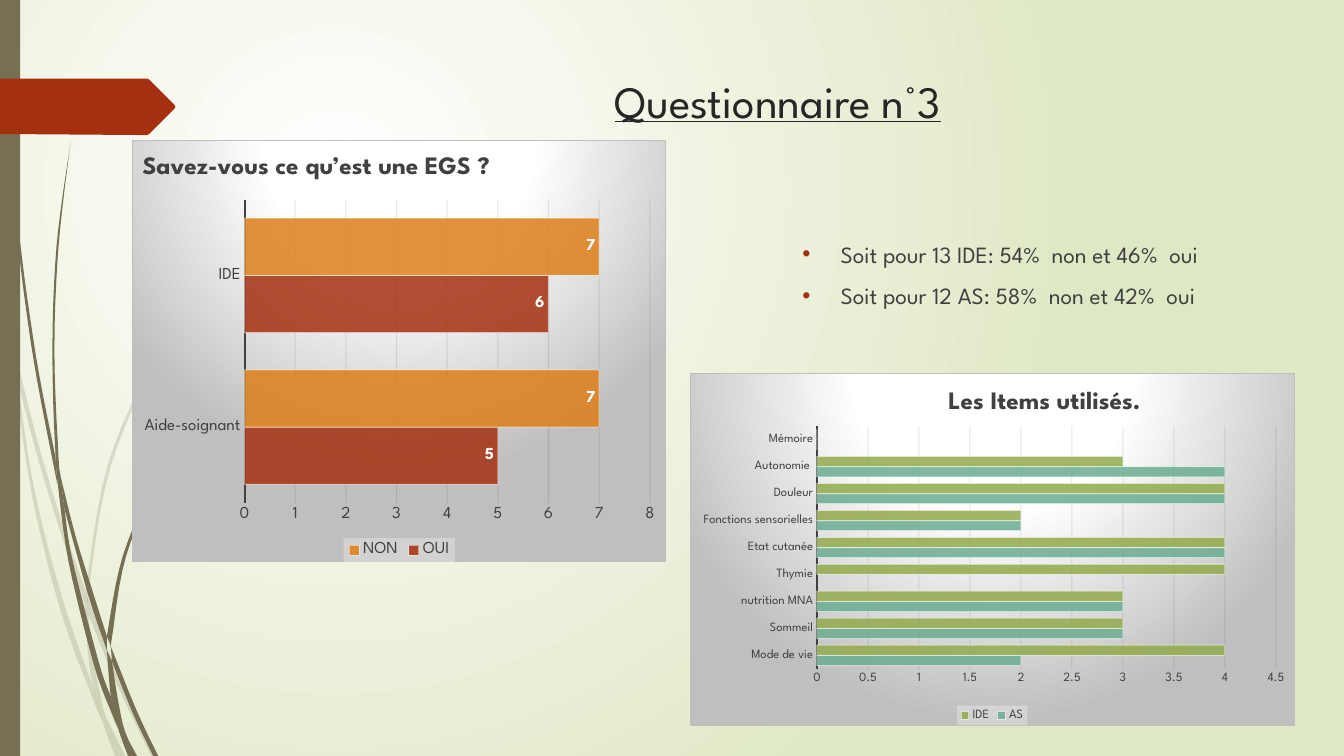
from lxml import etree
from pptx import Presentation
from pptx.chart.data import CategoryChartData
from pptx.dml.color import RGBColor
from pptx.enum.chart import XL_CHART_TYPE, XL_LABEL_POSITION, XL_LEGEND_POSITION, XL_TICK_MARK
from pptx.enum.shapes import MSO_SHAPE
from pptx.enum.text import PP_ALIGN
from pptx.oxml import parse_xml
from pptx.oxml.ns import nsdecls, qn
from pptx.util import Inches, Pt

BARS = XL_CHART_TYPE.BAR_CLUSTERED
INSIDE_END = XL_LABEL_POSITION.INSIDE_END
BOTTOM = XL_LEGEND_POSITION.BOTTOM
NO_TICK = XL_TICK_MARK.NONE
RECTANGLE = MSO_SHAPE.RECTANGLE
CENTER = PP_ALIGN.CENTER

FONT = "League Spartan"
BROWN, RED, GREY, DARK = "766F54", "A53010", "404040", "262626"
ORANGE, TEAL, OLIVE = "DE7E18", "6AAC91", "92AA4C"

PALE_GRASS = [
    ([(0, 2.99), (0.1, 3.44), (0.11, 3.5)], [(0.09, 3.22), (0, 2.82)]),
    ([(0.14, 3.45), (0.36, 4.33), (0.62, 5.2), (0.85, 5.86)],
     [(0.84, 5.99), (0.58, 5.22), (0.36, 4.49), (0.17, 3.76)]),
    ([(0.88, 5.96), (1.09, 6.5), (1.27, 6.92), (1.55, 7.5)],
     [(1.5, 7.5), (1.23, 6.94), (1.05, 6.53), (0.88, 6.1)]),
    ([(0.11, 3.5), (0.28, 4.7), (0.44, 5.46), (0.65, 6.21), (0.92, 6.93), (1.01, 7.14)],
     [(0.93, 6.83), (0.7, 6.19), (0.48, 5.44), (0.31, 4.69), (0.17, 3.76), (0.11, 3.5)]),
    ([(0.84, 5.99), (0.87, 6.46), (0.93, 6.83), (1.05, 7.11)],
     [(1.03, 7.06), (0.91, 6.46), (0.88, 6.1)]),
    ([(0.85, 5.86), (1.07, 4.61), (1.58, 3.48), (2.28, 2.44), (2.68, 1.97), (3.12, 1.53)],
     [(3.12, 1.54), (2.68, 1.98), (2.29, 2.45), (1.6, 3.49), (1.1, 4.62), (0.88, 5.84), (0.88, 5.96)]),
    ([(0.93, 6.83), (1.01, 7.14), (1.14, 7.5)], [(1.24, 7.5), (1.05, 7.11), (0.96, 6.92)]),
    ([(0.84, 5.99), (0.88, 6.1)], [(0.88, 5.96), (0.85, 5.86)]),
]
DARK_GRASS = [
    ([(0.03, 0), (0.07, 1.1), (0.17, 2.33), (0.33, 3.55), (0.57, 4.81)],
     [(0.55, 4.53), (0.36, 3.55), (0.19, 2.32), (0.08, 1.09), (0.04, 0)]),
    ([(0.6, 4.72), (0.75, 5.32), (0.93, 5.9), (1.06, 6.31)],
     [(1.06, 6.45), (0.88, 5.92), (0.64, 5.05)]),
    ([(1.1, 6.41), (1.13, 6.49), (1.36, 7.06), (1.57, 7.5)],
     [(1.52, 7.5), (1.32, 7.08), (1.11, 6.56)]),
    ([(0.57, 4.77), (0.68, 5.57), (0.93, 6.59), (1.11, 7.08), (1.17, 7.22)],
     [(1.1, 6.91), (0.98, 6.57), (0.72, 5.56), (0.64, 5.05)]),
    ([(0.6, 4.72), (0.55, 4.49), (0.52, 3.49), (0.56, 2.45), (0.7, 1.41)],
     [(0.7, 1.41), (0.58, 2.45), (0.54, 3.49), (0.58, 4.53), (0.6, 4.72)]),
    ([(1.06, 6.31), (1.22, 5.51), (1.56, 4.74), (2.04, 4.05), (2.6, 3.44)],
     [(2.61, 3.44), (2.05, 4.06), (1.58, 4.76), (1.25, 5.52), (1.11, 6.33), (1.1, 6.41)]),
    ([(1.06, 6.45), (1.1, 6.91), (1.17, 7.22), (1.27, 7.5)],
     [(1.36, 7.5), (1.22, 7.19), (1.11, 6.56)]),
    ([(0.55, 4.49), (0.57, 4.77), (0.64, 5.05)], [(0.6, 4.72)]),
]
TAB = [(0, 0.78), (1.46, 0.78), (1.48, 0.79), (1.73, 1.04), (1.74, 1.06),
       (1.73, 1.08), (1.48, 1.33), (1.46, 1.34), (1.36, 1.34), (0, 1.33)]
ITEMS = ["Mode de vie", "Sommeil", "nutrition MNA", "Thymie", "Etat cutanée",
         "Fonctions sensorielles", "Douleur", "Autonomie ", "Mémoire"]


def rgb(code):
    return RGBColor.from_string(code)


def fade(parent, *percents):
    for color, percent in zip(parent.iter(qn("a:srgbClr")), percents):
        etree.SubElement(color, qn("a:alpha")).set("val", str(percent * 1000))


def radial(stops, focus):
    marks = "".join(f'<a:gs pos="{pos * 1000}"><a:srgbClr val="{code}"/></a:gs>' for pos, code in stops)
    sides = " ".join(f'{side}="{value * 1000}"' for side, value in zip("ltrb", focus))
    return (f'<a:gradFill {nsdecls("a")} rotWithShape="1"><a:gsLst>{marks}</a:gsLst>'
            f'<a:path path="circle"><a:fillToRect {sides}/></a:path></a:gradFill>')


def set_layout(parent, index, target, **fractions):
    for old in parent.findall(qn("c:layout")):
        parent.remove(old)
    modes = "".join(f'<c:{axis}Mode val="edge"/>' for axis in "xy")
    values = "".join(f'<c:{key} val="{value}"/>' for key, value in fractions.items())
    parent.insert(index, parse_xml(f'<c:layout {nsdecls("c")}><c:manualLayout>{target}{modes}{values}'
                                   '</c:manualLayout></c:layout>'))


def smooth_edge(knots, steps=6):
    padded = [knots[0], *knots, knots[-1]]
    curve = [knots[0]]
    for a, b, c, d in zip(padded, padded[1:], padded[2:], padded[3:]):
        for t in (step / steps for step in range(1, steps + 1)):
            curve.append(tuple(
                (2 * q + (r - p) * t + (2 * p - 5 * q + 4 * r - s) * t ** 2
                 + (3 * q - p - 3 * r + s) * t ** 3) / 2
                for p, q, r, s in zip(a, b, c, d)))
    return curve


class Deck:
    """Holds the presentation, its current slide and the shared text style."""

    def __init__(self):
        self.prs = Presentation()
        self.prs.slide_width, self.prs.slide_height = Inches(13.33), Inches(7.5)
        self.slide = self.prs.slides.add_slide(self.prs.slide_layouts[6])
        self.shapes = self.slide.shapes

    def backdrop(self, stops, focus):
        self.slide.background.fill.solid()
        solid = self.slide.element.find(".//" + qn("a:solidFill"))
        solid.getparent().replace(solid, parse_xml(radial(stops, focus)))

    def style(self, font, size, color, bold=False):
        font.name, font.size, font.bold = FONT, Pt(size), bold
        font.color.rgb = rgb(color)

    def paint(self, shape, color):
        shape.shadow.inherit = False
        shape.fill.solid()
        shape.fill.fore_color.rgb = rgb(color)
        shape.line.fill.background()

    def bar(self, x, y, w, h, color):
        self.paint(self.shapes.add_shape(RECTANGLE, Inches(x), Inches(y), Inches(w), Inches(h)), color)

    def outline(self, points, color, opacity=100):
        grid = [(x * 1000, y * 1000) for x, y in points]
        builder = self.shapes.build_freeform(*grid[0], scale=Inches(1) / 1000)
        builder.add_line_segments(grid[1:], close=True)
        form = builder.convert_to_shape()
        self.paint(form, color)
        if opacity < 100:
            fade(form.element.spPr, opacity)

    def text(self, x, y, w, h, lines, size, color, bullet=None):
        frame = self.shapes.add_textbox(Inches(x), Inches(y), Inches(w), Inches(h)).text_frame
        frame.word_wrap = True
        frame.text = "\n".join(lines)
        for paragraph in frame.paragraphs:
            self.style(paragraph.runs[0].font, size, color)
            if bullet is None:
                paragraph.alignment = CENTER
                paragraph.runs[0].font.underline = True
                continue
            paragraph.space_before = Pt(10)
            props = paragraph._p.get_or_add_pPr()
            props.set("marL", str(Inches(0.38)))
            props.set("indent", str(-Inches(0.38)))
            tint = etree.SubElement(props, qn("a:buClr"))
            etree.SubElement(tint, qn("a:srgbClr")).set("val", bullet)
            etree.SubElement(props, qn("a:buFont")).set("typeface", "Arial")
            etree.SubElement(props, qn("a:buChar")).set("char", "•")

    def bar_chart(self, x, y, w, h, title, categories, series, size, top, step, title_at, plot_at, labels=False):
        data = CategoryChartData()
        data.categories = categories
        for name, values, _ in series:
            data.add_series(name, values)
        chart = self.shapes.add_chart(BARS, Inches(x), Inches(y), Inches(w), Inches(h), data).chart
        self.style(chart.font, size, GREY)
        chart.has_title = True
        chart.chart_title.text_frame.text = title
        self.style(chart.chart_title.text_frame.paragraphs[0].runs[0].font, 18, GREY, True)
        chart.has_legend = True
        chart.legend.position, chart.legend.include_in_layout = BOTTOM, False
        self.style(chart.legend.font, size, GREY)
        plot = chart.plots[0]
        plot.gap_width, plot.overlap, plot.vary_by_categories = 65, 0, False
        for axis in (chart.category_axis, chart.value_axis):
            self.style(axis.tick_labels.font, size, GREY)
            axis.major_tick_mark = axis.minor_tick_mark = NO_TICK
        chart.category_axis.format.line.color.rgb = rgb(GREY)
        chart.category_axis.format.line.width = Pt(1.5)
        scale = chart.value_axis
        scale.minimum_scale, scale.maximum_scale, scale.major_unit = 0, top, step
        scale.format.line.fill.background()
        scale.major_gridlines.format.line.color.rgb = rgb("0D0D0D")
        scale.major_gridlines.format.line.width = Pt(0.75)
        root = chart.element
        fade(root.find(".//" + qn("c:majorGridlines")), 10)
        for group, (_, _, color), node in zip(plot.series, series, root.iter(qn("c:ser"))):
            group.format.fill.solid()
            group.format.fill.fore_color.rgb = rgb(color)
            group.format.line.color.rgb = rgb("FFFFFF")
            group.format.line.width = Pt(0.75)
            fade(node.find(qn("c:spPr")), 85, 50)
            if labels:
                group.data_labels.show_value = True
                group.data_labels.position = INSIDE_END
                self.style(group.data_labels.font, 12, "FFFFFF", True)
        set_layout(root.find(".//" + qn("c:title")), 1, "", **dict(zip("xy", title_at)))
        set_layout(root.find(".//" + qn("c:plotArea")), 0, '<c:layoutTarget val="inner"/>',
                   **dict(zip("xywh", plot_at)))
        panel = radial([(0, "FFFFFF"), (39, "FFFFFF"), (100, "BFBFBF")], (50, -80, 50, 180))
        border = '<a:ln w="9525"><a:solidFill><a:srgbClr val="BFBFBF"/></a:solidFill></a:ln>'
        root.find(qn("c:chart")).addnext(parse_xml(f'<c:spPr {nsdecls("c", "a")}>{panel}{border}</c:spPr>'))
        veil = parse_xml(f'<c:spPr {nsdecls("c", "a")}><a:solidFill><a:srgbClr val="F2F2F2"/></a:solidFill></c:spPr>')
        fade(veil, 39)
        root.find(".//" + qn("c:legend")).find(qn("c:overlay")).addnext(veil)


def main():
    deck = Deck()
    deck.backdrop([(0, "FFFFFF"), (100, "DFE8C4")], (50, 50, 100, 100))
    for blades, opacity in ((PALE_GRASS, 20), (DARK_GRASS, 100)):
        for left, right in blades:
            deck.outline(smooth_edge(left) + smooth_edge(right), BROWN, opacity)
    deck.bar(0, 0, 0.2, 7.5, BROWN)
    deck.outline(TAB, RED)
    deck.text(2.84, 0.68, 9.75, 1.4, ["Questionnaire n°3"], 32, DARK)
    deck.bar_chart(1.31, 1.39, 5.3, 4.19, "Savez-vous ce qu’est une EGS ?", ["Aide-soignant", "IDE"],
                   [("OUI", (5, 6), RED), ("NON", (7, 7), ORANGE)], 12, 8, 1,
                   (0.01, 0.02), (0.21, 0.14, 0.76, 0.72), labels=True)
    deck.text(7.86, 2.33, 4.72, 1.03, ["Soit pour 13 IDE: 54%  non et 46%  oui",
                                       "Soit pour 12 AS: 58%  non et 42%  oui"], 16.6, GREY, RED)
    deck.bar_chart(6.84, 3.7, 6, 3.5, "Les Items utilisés.", ITEMS,
                   [("AS", (2, 3, 3, None, 4, 2, 4, 4, 0), TEAL), ("IDE", (4, 3, 3, 4, 4, 2, 4, 3, 0), OLIVE)],
                   9, 4.5, 0.5, (0.42, 0.03), (0.21, 0.15, 0.76, 0.69))
    deck.prs.save("out.pptx")


if __name__ == "__main__":
    main()
